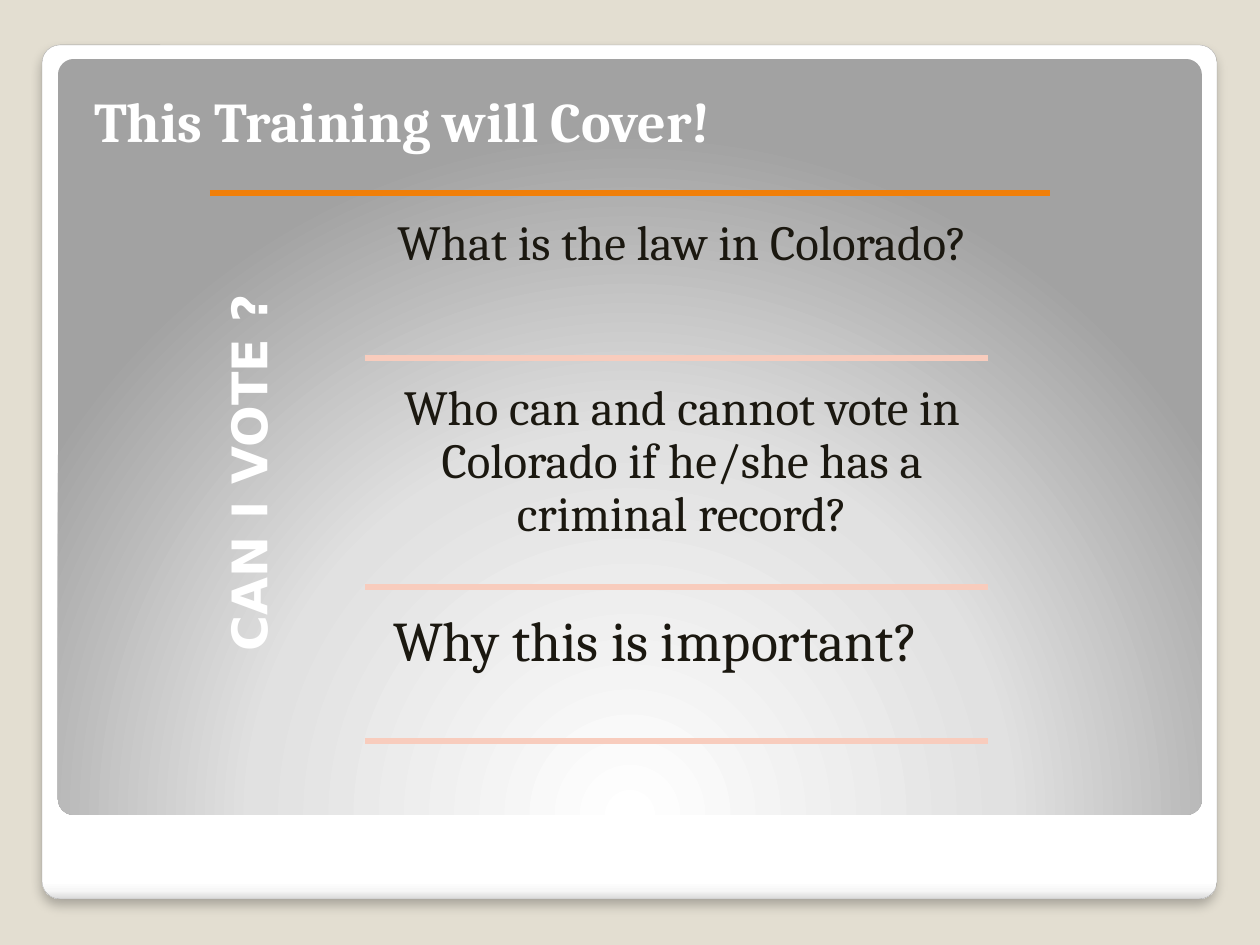
from lxml.etree import SubElement
from pptx import Presentation
from pptx.dml.color import RGBColor
from pptx.enum.shapes import MSO_CONNECTOR, MSO_SHAPE
from pptx.enum.text import MSO_ANCHOR, PP_ALIGN
from pptx.oxml import parse_xml
from pptx.oxml.ns import nsdecls, qn
from pptx.util import Pt

SCALE = 914400 / 126  # EMU in one px
SERIF, SANS = "Cambria", "DejaVu Sans"
WHITE, INK, ORANGE, PINK = "FFFFFF", "1B1810", "F07F09", "F8CCBD"


def px(*lengths):
    return [round(length * SCALE) for length in lengths]


def color(hex_code):
    return RGBColor.from_string(hex_code)


def add_panel(slide, box, stops, direction):
    """Rounded panel with a gradient; direction is the XML after the stops."""
    panel = slide.shapes.add_shape(MSO_SHAPE.ROUNDED_RECTANGLE, *px(*box))
    panel.adjustments[0] = 0.021
    panel.shadow.inherit = False
    panel.line.fill.background()
    marks = "".join(
        f'<a:gs pos="{percent * 1000}"><a:srgbClr val="{hex_code}"/></a:gs>'
        for percent, hex_code in stops)
    gradient = parse_xml(f'<a:gradFill {nsdecls("a")} rotWithShape="1">'
                         f'<a:gsLst>{marks}</a:gsLst>{direction}</a:gradFill>')
    panel.element.spPr.find(qn("a:prstGeom")).addnext(gradient)
    return panel


def add_backdrop(slide, box):
    left, top, width, height = box
    # White card with a soft shadow
    card = add_panel(slide, box, [(0, WHITE), (98, WHITE), (99, "F7F7F7"), (100, "DADADA")],
                     '<a:lin ang="5400000" scaled="0"/>')
    card.line.color.rgb = color("A4A4A4")
    card.line.width = Pt(0.16)
    card.element.spPr.find(qn("a:effectLst")).append(parse_xml(
        f'<a:outerShdw {nsdecls("a")} blurRad="{Pt(6)}" dist="{Pt(4)}" dir="5400000" '
        'algn="ctr" rotWithShape="0"><a:srgbClr val="000000"><a:alpha val="25000"/>'
        '</a:srgbClr></a:outerShdw>'))
    # Grey panel, lit from its lower edge
    add_panel(slide, (left + 16, top + 14, width - 31, height - 98),
              [(0, WHITE), (55, "E1E1E1"), (100, "A2A2A2")],
              '<a:path path="circle"><a:fillToRect l="50000" t="175000" '
              'r="50000" b="-75000"/></a:path>')


def write(shape, text, size, font, hex_code, insets, bold=False, align=PP_ALIGN.CENTER):
    frame = shape.text_frame
    frame.word_wrap = True
    frame.vertical_anchor = MSO_ANCHOR.TOP
    (frame.margin_left, frame.margin_top,
     frame.margin_right, frame.margin_bottom) = px(*insets)
    frame.text = text
    paragraph = frame.paragraphs[0]
    paragraph.alignment = align
    paragraph.line_spacing = 0.9
    paragraph.font.size = Pt(size)
    paragraph.font.name = font
    paragraph.font.bold = bold
    paragraph.font.color.rgb = color(hex_code)
    return paragraph


def add_rule(slide, left, right, y, hex_code):
    rule = slide.shapes.add_connector(MSO_CONNECTOR.STRAIGHT, *px(left, y, right, y))
    rule.line.color.rgb = color(hex_code)
    rule.line.width = Pt(3.35)
    SubElement(rule.element.spPr, qn("a:effectLst"))


def place_title(slide, box):
    title = slide.shapes.title
    title.left, title.top, title.width, title.height = px(*box)
    heading = write(title, "This Training will Cover!", 32, SERIF, WHITE,
                    (25, 13, 13, 6), bold=True, align=PP_ALIGN.LEFT)
    heading.line_spacing = 1.0
    heading.space_before = Pt(2.5)


def add_agenda(slide, box):
    left, top, width, height = box
    add_rule(slide, left, left + width, top, ORANGE)

    # Question that reads upward beside the topics
    question = slide.shapes.add_textbox(*px(left, top, 155, height))
    write(question, "CAN I VOTE ?", 28, SANS, WHITE, [15] * 4, bold=True)
    question.text_frame._txBody.bodyPr.set("vert", "vert270")

    # Topics, each closed by a rule: text, row height, text width, size, inset, alignment
    topics = [
        ("What is the law in Colorado?", 165, 610, 28, 15, PP_ALIGN.CENTER),
        ("Who can and cannot vote in Colorado if he/she has a criminal record?",
         229, 610, 28, 15, PP_ALIGN.CENTER),
        ("Why this is important?", 154, 673, 32, 16, PP_ALIGN.LEFT),
    ]
    row_top = top
    for text, row_height, text_width, size, inset, align in topics:
        topic = slide.shapes.add_textbox(
            *px(left + 167, row_top + 10, text_width, row_height - 10))
        write(topic, text, size, SERIF, INK, [inset] * 4, align=align)
        row_top += row_height
        add_rule(slide, left + 155, left + 778, row_top, PINK)


def main():
    deck = Presentation()
    deck.slide_width, deck.slide_height = px(1260, 945)
    slide = deck.slides.add_slide(deck.slide_layouts[5])
    slide.background.fill.solid()
    slide.background.fill.fore_color.rgb = color("E3DED1")

    add_backdrop(slide, (42, 45, 1175, 854))
    place_title(slide, (69, 73, 1128, 577))
    # Bring the title in front of the backdrop
    slide.shapes.element.append(slide.shapes.title.element)
    add_agenda(slide, (210, 193, 840, 559))
    deck.save("out.pptx")


if __name__ == "__main__":
    main()
